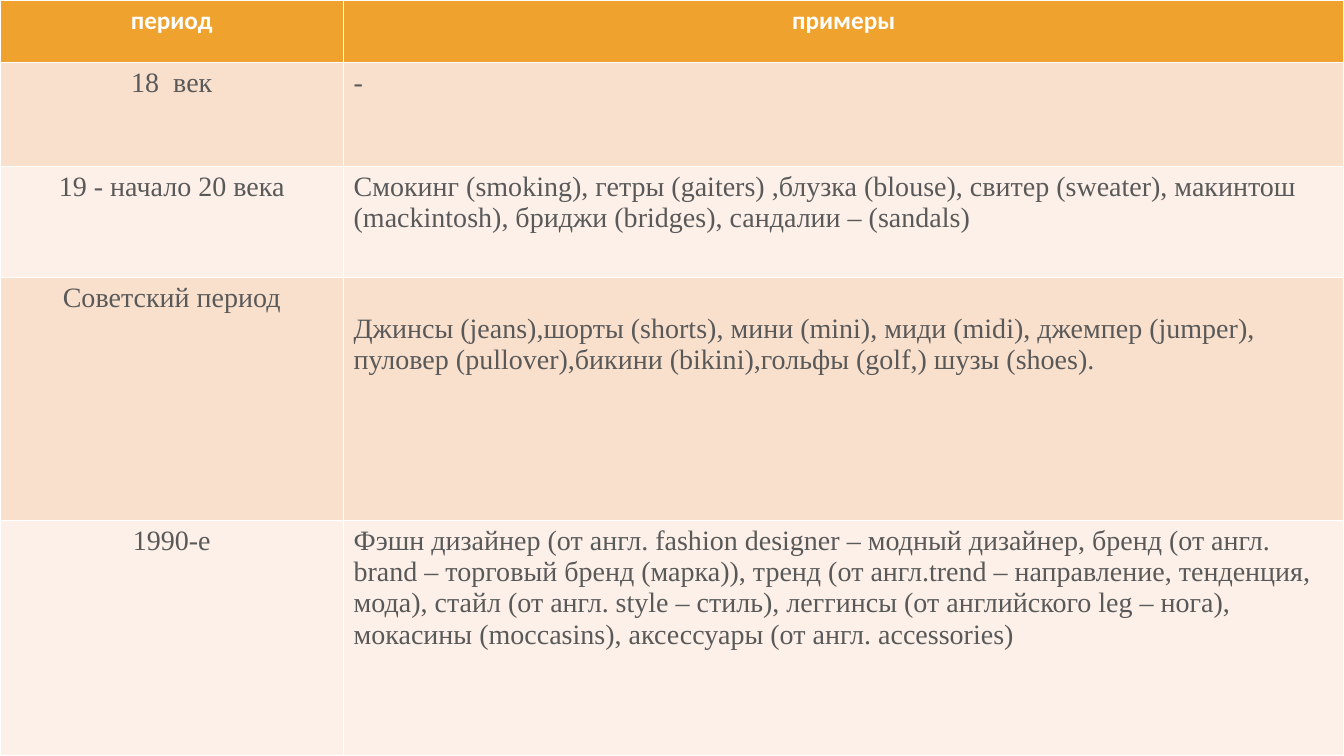
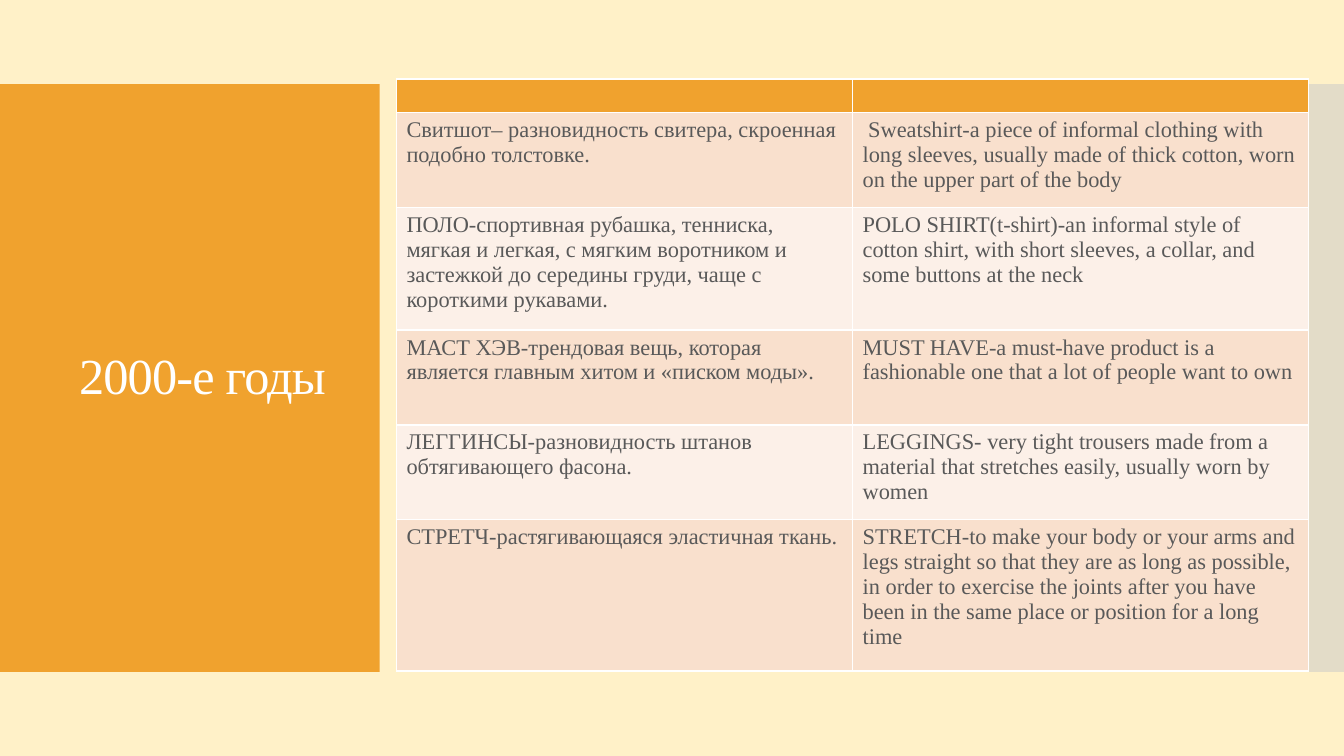
"""Build two slides on English loanwords for clothes in Russian."""
from lxml import etree
from pptx import Presentation
from pptx.dml.color import RGBColor
from pptx.enum.shapes import MSO_SHAPE
from pptx.enum.text import MSO_ANCHOR, MSO_AUTO_SIZE, PP_ALIGN
from pptx.oxml.ns import qn
from pptx.util import Inches, Pt

RECTANGLE = MSO_SHAPE.RECTANGLE
MIDDLE = MSO_ANCHOR.MIDDLE
NO_AUTOFIT = MSO_AUTO_SIZE.NONE
CENTER, LEFT = PP_ALIGN.CENTER, PP_ALIGN.LEFT

CREAM = RGBColor(0xFF, 0xF1, 0xC8)
ORANGE = RGBColor(0xF0, 0xA2, 0x2E)
GRAY = RGBColor(0xC8, 0xC8, 0xC8)
WHITE = RGBColor(0xFF, 0xFF, 0xFF)
TEXT = RGBColor(0x59, 0x59, 0x59)
PEACH = RGBColor(0xF9, 0xE0, 0xCD)
PALE = RGBColor(0xFC, 0xF0, 0xE8)

SERIF, SANS = "Times New Roman", "Calibri"
COLUMNS, ROWS = 16, 9
UNIT = Inches(7.5) / ROWS
TITLE_ONLY, BLANK = 5, 6

PERIODS = [
    ("период", "примеры"),
    ("18  век", "-"),
    ("19 - начало 20 века",
     "Смокинг (smoking), гетры (gaiters) ,блузка (blouse), свитер (sweater), "
     "макинтош (mackintosh), бриджи (bridges), сандалии – (sandals)"),
    ("Советский период",
     "Джинсы (jeans),шорты (shorts), мини (mini), миди (midi), джемпер (jumper), "
     "пуловер (pullover),бикини (bikini),гольфы (golf,) шузы (shoes)."),
    ("1990-е",
     "Фэшн дизайнер (от англ. fashion designer – модный дизайнер, бренд (от англ. "
     "brand – торговый бренд (марка)), тренд (от англ.trend – направление, тенденция, "
     "мода), стайл (от англ. style – стиль), леггинсы (от английского leg – нога), "
     "мокасины (moccasins), аксессуары (от англ. accessories)"),
]
GLOSSARY = [
    ("", ""),
    ("Свитшот– разновидность свитера, скроенная подобно толстовке.",
     " Sweatshirt-a piece of informal clothing with long sleeves, usually made of "
     "thick cotton, worn on the upper part of the body"),
    ("ПОЛО-спортивная рубашка, тенниска, мягкая и легкая, с мягким воротником и "
     "застежкой до середины груди, чаще с короткими рукавами.",
     "POLO SHIRT(t-shirt)-an informal style of cotton shirt, with short sleeves, "
     "a collar, and some buttons at the neck"),
    ("МАСТ ХЭВ-трендовая вещь, которая является главным хитом и «писком моды».",
     "MUST HAVE-a must-have product is a fashionable one that a lot of people want to own"),
    ("ЛЕГГИНСЫ-разновидность штанов обтягивающего фасона.",
     "LEGGINGS- very tight trousers made from a material that stretches easily, "
     "usually worn by women"),
    ("СТРЕТЧ-растягивающаяся эластичная ткань.",
     "STRETCH-to make your body or your arms and legs straight so that they are as "
     "long as possible, in order to exercise the joints after you have been in the "
     "same place or position for a long time"),
]


def grid(*lengths):
    return [round(length * UNIT) for length in lengths]


class Deck:
    def __init__(self):
        self.presentation = Presentation()
        self.presentation.slide_width, self.presentation.slide_height = grid(COLUMNS, ROWS)
        self.slide = None

    def set_background(self):
        fill = self.presentation.slide_master.background.fill
        fill.solid()
        fill.fore_color.rgb = CREAM

    def add_slide(self, layout):
        self.slide = self.presentation.slides.add_slide(self.presentation.slide_layouts[layout])

    def add_master_band(self, left, width, color, shape_id, opacity=100):
        shape = self.slide.shapes.add_shape(RECTANGLE, *grid(left, 1, width, ROWS - 2))
        shape.shadow.inherit = False
        shape.line.fill.background()
        shape.fill.solid()
        shape.fill.fore_color.rgb = color
        if opacity < 100:
            color_element = next(shape.element.spPr.iter(qn("a:srgbClr")))
            etree.SubElement(color_element, qn("a:alpha")).set("val", str(opacity * 1000))
        shape.element.nvSpPr.cNvPr.set("id", str(shape_id))
        self.presentation.slide_master.shapes.element.insert(2, shape.element)

    def style_runs(self, paragraph, size, color, name=SERIF, bold=False):
        for run in paragraph.runs:
            font = run.font
            font.size, font.name, font.bold = Pt(size), name, bold
            font.color.rgb = color

    def add_title(self, text, left, top, width, height):
        title = self.slide.shapes.title
        title.left, title.top, title.width, title.height = grid(left, top, width, height)
        frame = title.text_frame
        frame.text = text
        frame.auto_size, frame.vertical_anchor, frame.word_wrap = NO_AUTOFIT, MIDDLE, True
        paragraph = frame.paragraphs[0]
        paragraph.alignment, paragraph.line_spacing = CENTER, 0.9
        self.style_runs(paragraph, 36, WHITE)
        for run in paragraph.runs:
            run.font._element.set("spc", "-60")

    def fill_cell(self, cell, text, size, is_header, fill, alignment):
        cell.fill.solid()
        cell.fill.fore_color.rgb = fill
        cell.text_frame.text = text
        paragraph = cell.text_frame.paragraphs[0]
        paragraph.alignment = alignment
        if is_header:
            self.style_runs(paragraph, 18, WHITE, SANS, True)
        else:
            self.style_runs(paragraph, size, TEXT)
        if not text:
            etree.SubElement(paragraph._p, qn("a:endParaRPr")).set("sz", "1200")

    def add_table(self, content, left, top, widths, heights, size, first_alignment=LEFT):
        frame = self.slide.shapes.add_table(
            len(heights), len(widths), *grid(left, top, sum(widths), sum(heights)))
        table = frame.table
        for column, width in zip(table.columns, grid(*widths)):
            column.width = width
        for row, height in zip(table.rows, grid(*heights)):
            row.height = height
        for row_index, texts in enumerate(content):
            is_header = row_index == 0
            fill = ORANGE if is_header else (PALE, PEACH)[row_index % 2]
            for column_index, text in enumerate(texts):
                alignment = CENTER if is_header else (first_alignment, LEFT)[column_index]
                self.fill_cell(table.cell(row_index, column_index), text, size,
                               is_header, fill, alignment)
        return table


def main():
    deck = Deck()
    deck.set_background()

    deck.add_slide(BLANK)
    deck.add_master_band(15.5, 0.5, GRAY, 101, opacity=50)
    deck.add_master_band(0, 4.52, ORANGE, 102)
    periods = deck.add_table(PERIODS, 0, 0, [4.09, 11.91], [0.74, 1.24, 1.32, 2.9, 2.8],
                             20, first_alignment=CENTER)
    periods.cell(3, 1).margin_top = Inches(0.36)

    deck.add_slide(TITLE_ONLY)
    deck.add_title("2000-е годы", 0.34, 1.48, 4.14, 6.04)
    deck.add_table(GLOSSARY, 4.72, 0.94, [5.43] * 2, [0.4, 1.13, 1.46, 1.13, 1.13, 1.8], 16)

    deck.presentation.save("out.pptx")


if __name__ == "__main__":
    main()
